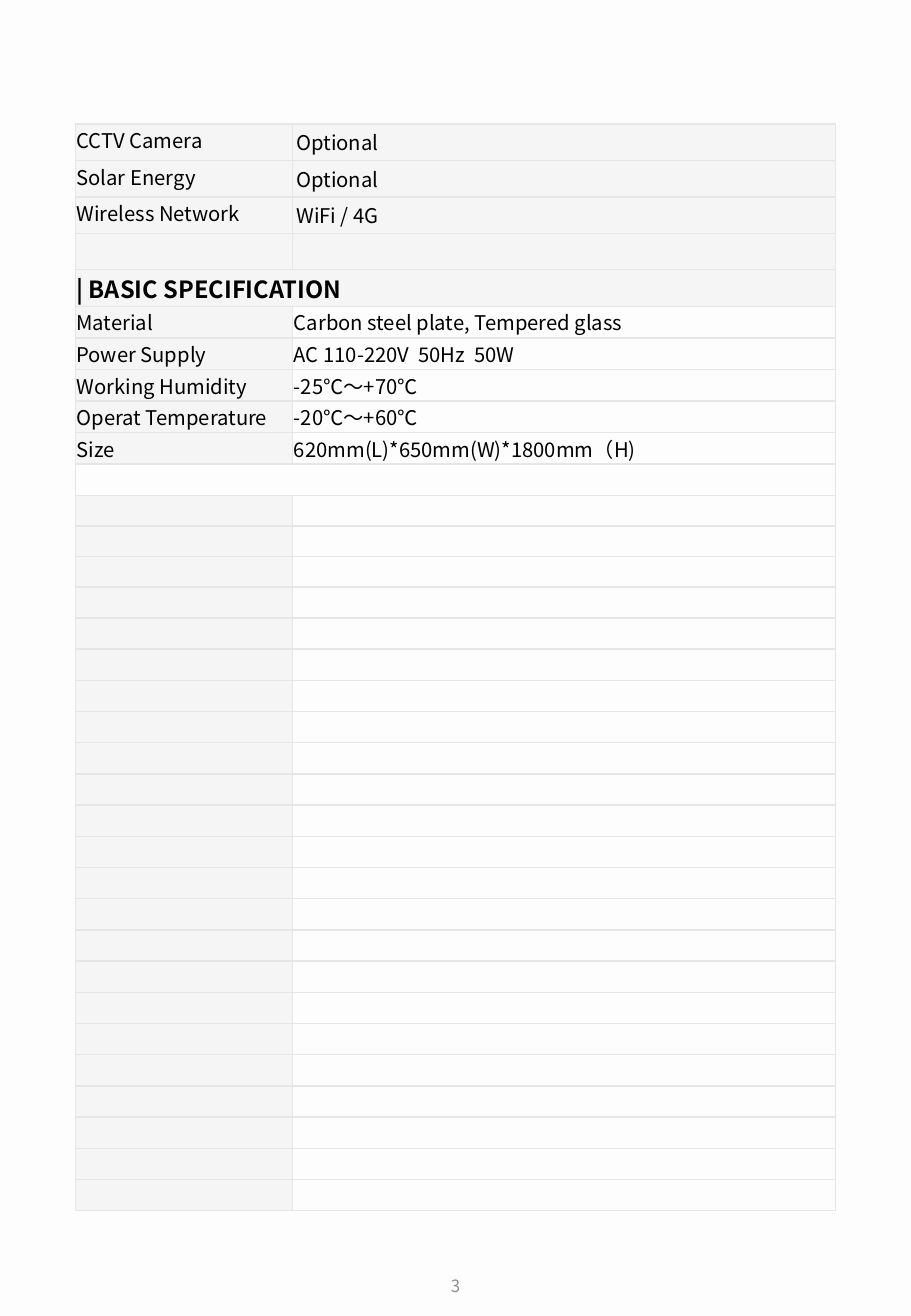
from lxml import etree
from pptx import Presentation
from pptx.dml.color import RGBColor
from pptx.enum import text
from pptx.oxml import ns
from pptx.util import Inches, Pt

FONT = "Noto Sans CJK JP"
PAPER = RGBColor(0xFD, 0xFD, 0xFD)
BLACK = RGBColor(0x00, 0x00, 0x00)
PAGE_GRAY = RGBColor(0x8C, 0x8C, 0x8C)
LABEL_GRAY = RGBColor(0xE7, 0xE6, 0xE6)
BORDER_GRAY = RGBColor(0xE6, 0xE6, 0xE6)

OPTIONS = [
    ("CCTV Camera", "Optional"),
    ("Solar Energy", "Optional"),
    ("Wireless Network", "WiFi / 4G"),
    ("", ""),
]
HEADING = "| BASIC SPECIFICATION"
SPECIFICATIONS = [
    ("Material", "Carbon steel plate, Tempered glass"),
    ("Power Supply", "AC 110-220V  50Hz  50W"),
    ("Working Humidity", "-25℃～+70℃"),
    ("Operat Temperature", "-20℃～+60℃"),
    ("Size", "620mm(L)*650mm(W)*1800mm（H)"),
]
EMPTY_ROWS = 23
ROWS = OPTIONS + [(HEADING, "")] + SPECIFICATIONS + [("", "")] * (EMPTY_ROWS + 1)
HEADING_ROW = len(OPTIONS)
SPACER_ROW = HEADING_ROW + len(SPECIFICATIONS) + 1
HEIGHTS = [0.3] * 5 + [0.26] * 6 + [0.25] * 3 + [5.14 / 20] * 20


def add_child(parent, tag, **attributes):
    return etree.SubElement(parent, ns.qn(tag), **attributes)


def set_borders(cell):
    properties = cell._tc.get_or_add_tcPr()
    for position, side in enumerate(("a:lnL", "a:lnR", "a:lnT", "a:lnB")):
        line = etree.Element(ns.qn(side), w=str(Pt(1)))
        fill = add_child(line, "a:solidFill")
        add_child(fill, "a:srgbClr", val=str(BORDER_GRAY))
        properties.insert(position, line)


def set_fill(cell, shaded):
    if not shaded:
        cell.fill.background()
        return
    cell.fill.solid()
    cell.fill.fore_color.rgb = LABEL_GRAY
    color = cell._tc.tcPr.find(ns.qn("a:solidFill")).find(ns.qn("a:srgbClr"))
    add_child(color, "a:alpha", val="34000")


def style_font(font, size, color, bold=False):
    font.name = FONT
    font.size = Pt(size)
    font.bold = bold
    font.color.rgb = color


def write_cell(cell, words, row, column):
    in_options = row < HEADING_ROW
    side = 0.03 if in_options and column == 1 else 0.01
    cell.margin_left = cell.margin_right = Inches(side)
    cell.margin_top = Inches(0.01)
    cell.margin_bottom = Inches(0.05 if in_options and column == 0 else 0.01)
    cell.vertical_anchor = text.MSO_ANCHOR.MIDDLE
    paragraph = cell.text_frame.paragraphs[0]
    if words:
        paragraph.text = words
        is_heading = row == HEADING_ROW
        style_font(paragraph.font, 14 if is_heading else 12, BLACK, is_heading)
    else:
        add_child(paragraph._p, "a:endParaRPr", sz="800")


def add_specification_table(slide, left, top, width, height):
    frame = slide.shapes.add_table(len(ROWS), 2, left, top, width, height)
    table = frame.table
    table.first_row = False
    table.horz_banding = False
    table.columns[0].width = Inches(1.79)
    table.columns[1].width = width - Inches(1.79)
    for row, (entries, row_height) in enumerate(zip(ROWS, HEIGHTS)):
        table.rows[row].height = Inches(row_height)
        for column, words in enumerate(entries):
            cell = table.cell(row, column)
            write_cell(cell, words, row, column)
            shaded = row <= HEADING_ROW or (column == 0 and row != SPACER_ROW)
            set_fill(cell, shaded)
            set_borders(cell)
    for row in (HEADING_ROW, SPACER_ROW):
        table.cell(row, 0).merge(table.cell(row, 1))


def add_page_number(slide, left, top, width, height):
    frame = slide.shapes.add_textbox(left, top, width, height).text_frame
    frame.word_wrap = True
    frame.vertical_anchor = text.MSO_ANCHOR.MIDDLE
    paragraph = frame.paragraphs[0]
    paragraph.text = "3"
    paragraph.alignment = text.PP_ALIGN.CENTER
    style_font(paragraph.font, 10, PAGE_GRAY)


def main():
    presentation = Presentation()
    presentation.slide_width = Inches(7.5)
    presentation.slide_height = Inches(10.83)
    slide = presentation.slides.add_slide(presentation.slide_layouts[6])
    slide.background.fill.solid()
    slide.background.fill.fore_color.rgb = PAPER
    add_page_number(slide, Inches(2.53), Inches(10.33), Inches(2.44), Inches(0.5))
    add_specification_table(
        slide, Inches(0.62), Inches(1.02), Inches(6.26), Inches(sum(HEIGHTS))
    )
    presentation.save("out.pptx")


if __name__ == "__main__":
    main()
